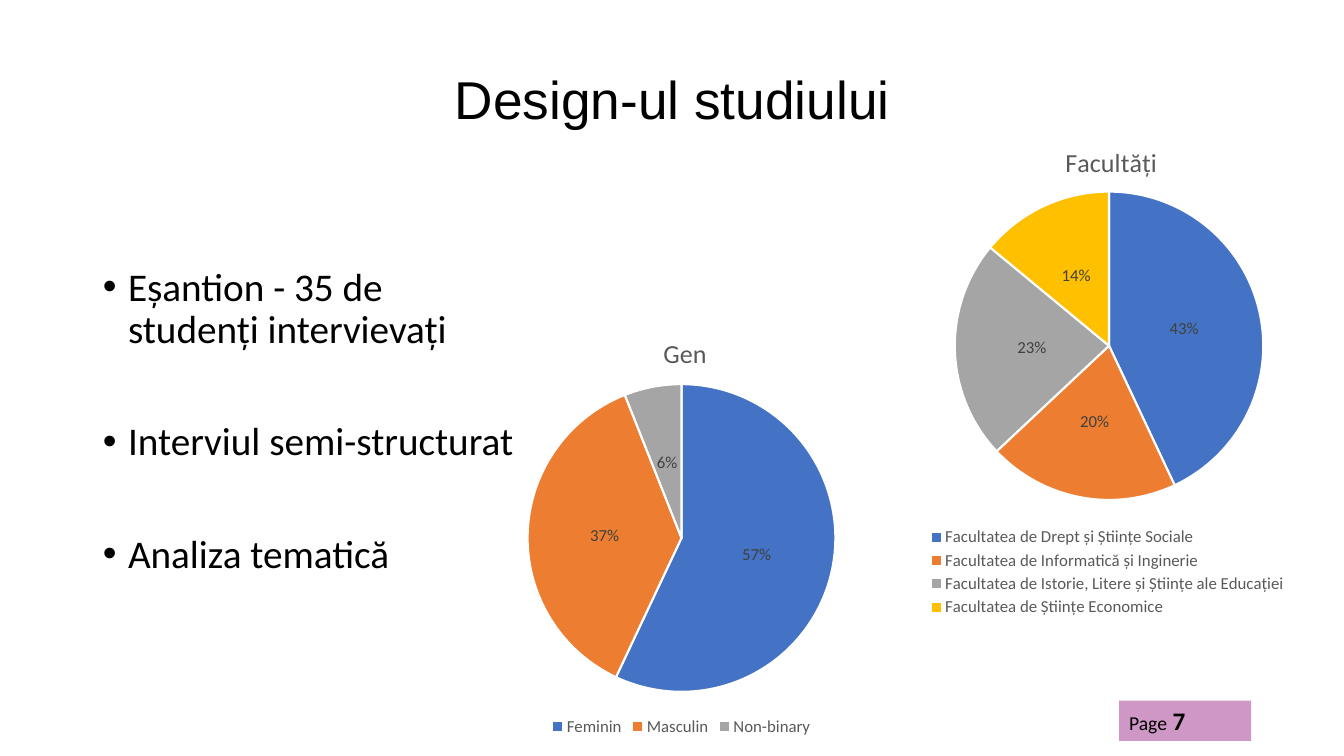
from dataclasses import dataclass
from typing import NamedTuple, Optional

from lxml.etree import SubElement
from pptx import Presentation
from pptx.chart.data import CategoryChartData
from pptx.dml.color import RGBColor
from pptx.enum.chart import XL_CHART_TYPE, XL_LABEL_POSITION, XL_LEGEND_POSITION
from pptx.enum.shapes import MSO_SHAPE
from pptx.enum.text import MSO_ANCHOR, MSO_AUTO_SIZE, PP_ALIGN
from pptx.oxml.ns import qn
from pptx.util import Emu, Inches, Pt

WIDTH, HEIGHT = Inches(13.33), Inches(7.5)
PALETTE = ["4472C4", "ED7D31", "A5A5A5", "FFC000"]
BULLETS = ["Eșantion - 35 de studenți intervievați", "Interviul semi-structurat", "Analiza tematică"]


class Area(NamedTuple):
    """A position and size in percent of the surrounding area."""
    x: float
    y: float
    w: float = 0
    h: float = 0

    def emu(self) -> list[Emu]:
        """Return the area in slide lengths."""
        return [Emu(int(v * full / 100)) for v, full in zip(self, (WIDTH, HEIGHT) * 2)]


@dataclass
class Pie:
    """A pie chart with its values and inner layout."""
    title: str
    area: Area
    values: dict[str, int]
    title_at: Area
    plot_at: Area
    legend_at: Optional[Area] = None


PIES = [
    Pie("Facultăți", Area(56.79, 15.07, 51.46, 67.2),
        {"Facultatea de Drept și Științe Sociale": 43,
         "Facultatea de Informatică și Inginerie": 20,
         "Facultatea de Istorie, Litere și Științe ale Educației": 23,
         "Facultatea de Științe Economice": 14},
        Area(43, 5), Area(27.7, 15.3, 44.6, 60.7), Area(23.8, 80.7, 52, 19)),
    Pie("Gen", Area(24.98, 40.67, 51.46, 57.33),
        {"Feminin": 57, "Masculin": 37, "Non-binary": 6},
        Area(46.7, 5.3), Area(27.7, 17.7, 44.6, 71)),
]


def rgb(value: str) -> RGBColor:
    """Turn a hex string into a colour."""
    return RGBColor.from_string(value)


def style(font, size: float, color: str = "000000", name: str = "Calibri", bold: bool = False) -> None:
    """Format a font."""
    font.size, font.name, font.bold = Pt(size), name, bold
    font.color.rgb = rgb(color)


def add_text(p, text: str, **fmt) -> None:
    """Add a formatted run to a paragraph."""
    r = p.add_run()
    r.text = text
    style(r.font, **fmt)


def place(shape, area: Area) -> None:
    """Move a shape to an area of the slide."""
    shape.left, shape.top, shape.width, shape.height = area.emu()


def set_layout(part, index: int, area: Area, inner: bool = False) -> None:
    """Give a chart part a manual layout."""
    for old in part.findall(qn("c:layout")):
        part.remove(old)
    layout = SubElement(part, qn("c:layout"))
    part.insert(index, layout)
    manual = SubElement(layout, qn("c:manualLayout"))
    items = [("layoutTarget", "inner")] if inner else []
    items += [("xMode", "edge"), ("yMode", "edge")]
    items += [(k, str(round(v / 100, 4))) for k, v in zip("xywh", area) if v]
    for tag, value in items:
        SubElement(manual, qn(f"c:{tag}")).set("val", value)


def add_pie(s, pie: Pie) -> None:
    """Draw a pie chart."""
    data = CategoryChartData()
    data.categories = list(pie.values)
    data.add_series("Series 1", list(pie.values.values()))
    chart = s.shapes.add_chart(XL_CHART_TYPE.PIE, *pie.area.emu(), data).chart
    style(chart.font, 10)
    add_text(chart.chart_title.text_frame.paragraphs[0], pie.title, size=18.6, color="595959")
    chart.chart_title.include_text_frame = True if hasattr(chart.chart_title, "include_text_frame") else None
    chart.has_legend = True
    chart.legend.position = XL_LEGEND_POSITION.BOTTOM
    chart.legend.include_in_layout = False
    style(chart.legend.font, 12, "595959")
    plot = chart.plots[0]
    plot.vary_by_categories = True
    plot.has_data_labels = True
    labels = plot.data_labels
    labels.show_percentage, labels.show_value = True, False
    labels.number_format, labels.number_format_is_linked = "0%", False
    labels.position = XL_LABEL_POSITION.CENTER
    style(labels.font, 12, "404040")
    for i, color in zip(range(len(pie.values)), PALETTE):
        fmt = plot.series[0].points[i].format
        fmt.fill.solid()
        fmt.fill.fore_color.rgb = rgb(color)
        fmt.line.color.rgb = rgb("FFFFFF")
        fmt.line.width = Pt(1.5)
    root = chart.element.find(qn("c:chart"))
    set_layout(root.find(qn("c:title")), 1, pie.title_at)
    set_layout(root.find(qn("c:plotArea")), 0, pie.plot_at, inner=True)
    if pie.legend_at:
        set_layout(root.find(qn("c:legend")), 1, pie.legend_at)


def add_title(s) -> None:
    """Fill the title placeholder."""
    title = s.shapes.title
    place(title, Area(6.9, 7.2, 86.25, 12.53))
    tf = title.text_frame
    tf.vertical_anchor, tf.auto_size = MSO_ANCHOR.MIDDLE, MSO_AUTO_SIZE.NONE
    p = tf.paragraphs[0]
    p.alignment, p.line_spacing = PP_ALIGN.CENTER, 0.9
    add_text(p, "Design-ul studiului", size=38, name="Arial")


def add_bullets(s) -> None:
    """Fill the body placeholder with the bullet list."""
    body = s.placeholders[1]
    place(body, Area(6.9, 34.67, 32.25, 55.47))
    tf = body.text_frame
    tf.word_wrap, tf.auto_size = True, MSO_AUTO_SIZE.NONE
    for i, text in enumerate(BULLETS):
        p = tf.add_paragraph() if i else tf.paragraphs[0]
        p.line_spacing, p.space_before = 0.9, Pt(50 if i else 0)
        pPr = p._p.get_or_add_pPr()
        pPr.set("marL", str(Inches(0.25)))
        pPr.set("indent", str(-Inches(0.25)))
        SubElement(pPr, qn("a:buFont")).set("typeface", "Arial")
        SubElement(pPr, qn("a:buChar")).set("char", "•")
        add_text(p, text, size=28)


def add_page_tag(s) -> None:
    """Draw the tinted page number."""
    tag = s.shapes.add_shape(MSO_SHAPE.RECTANGLE, *Area(83.27, 92.67, 9.83, 5.33).emu())
    tag.shadow.inherit = False
    tag.fill.solid()
    tag.fill.fore_color.rgb = rgb("9F318D")
    color = tag.fill._xPr.find(qn("a:solidFill"))[0]
    SubElement(color, qn("a:alpha")).set("val", "50000")
    tag.line.fill.background()
    tf = tag.text_frame
    tf.word_wrap, tf.vertical_anchor = True, MSO_ANCHOR.TOP
    p = tf.paragraphs[0]
    p.alignment = PP_ALIGN.LEFT
    add_text(p, "Page", size=14)
    add_text(p, " 7", size=18, bold=True)


def main() -> None:
    """Build the slide and save it."""
    prs = Presentation()
    prs.slide_width, prs.slide_height = WIDTH, HEIGHT
    s = prs.slides.add_slide(prs.slide_layouts[1])
    add_title(s)
    add_bullets(s)
    add_page_tag(s)
    for pie in PIES:
        add_pie(s, pie)
    prs.save("out.pptx")


if __name__ == "__main__":
    main()
